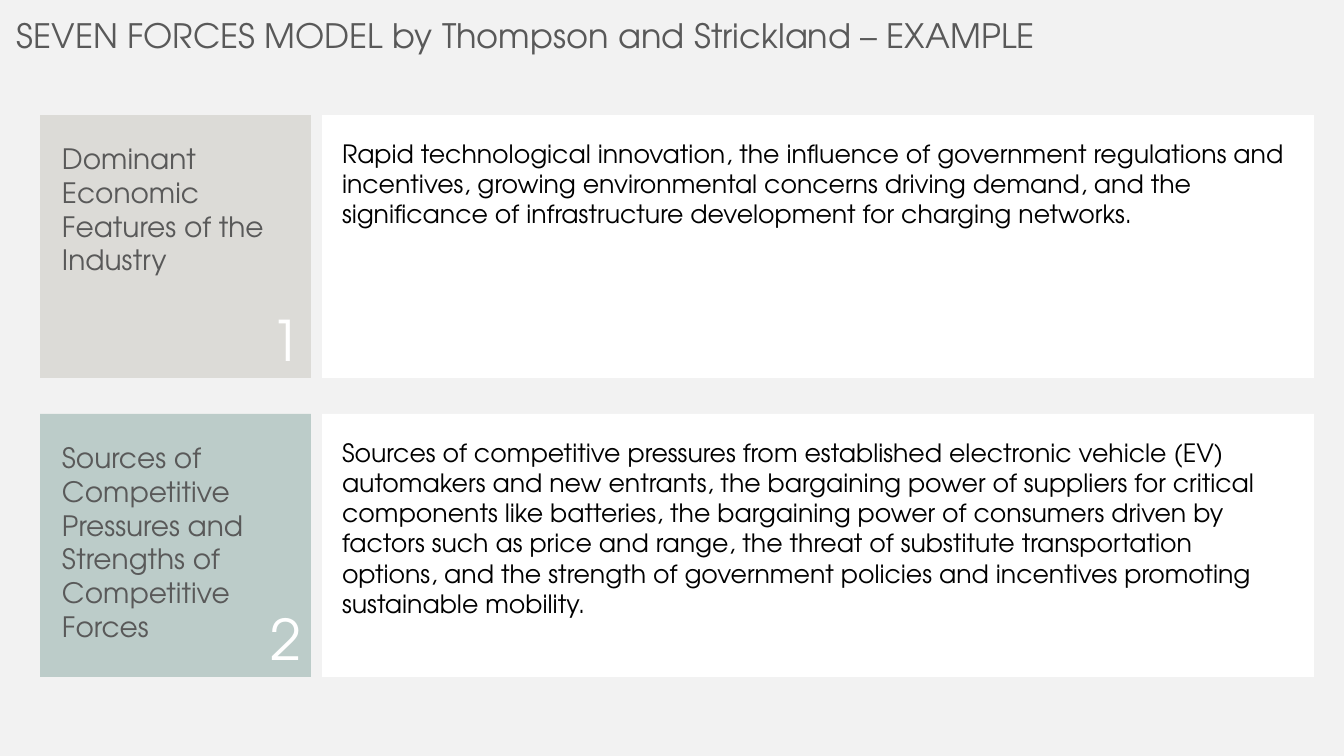
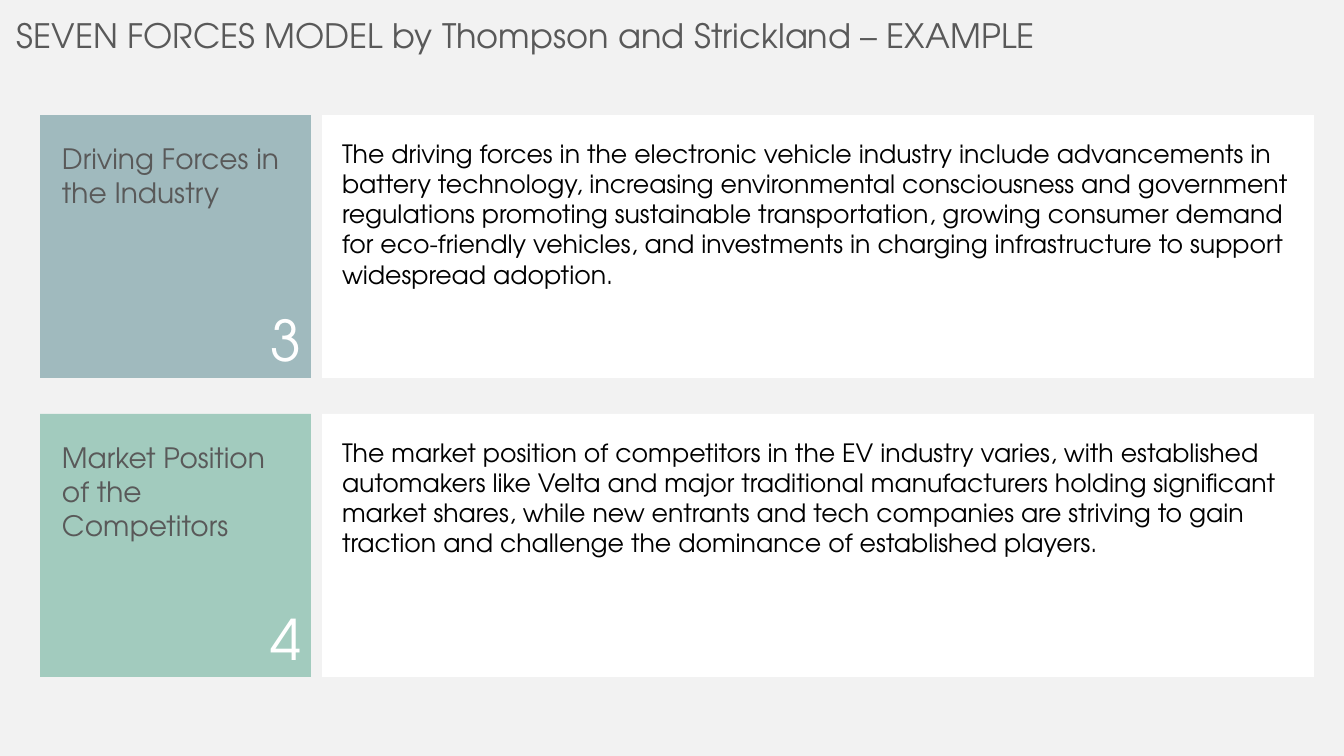
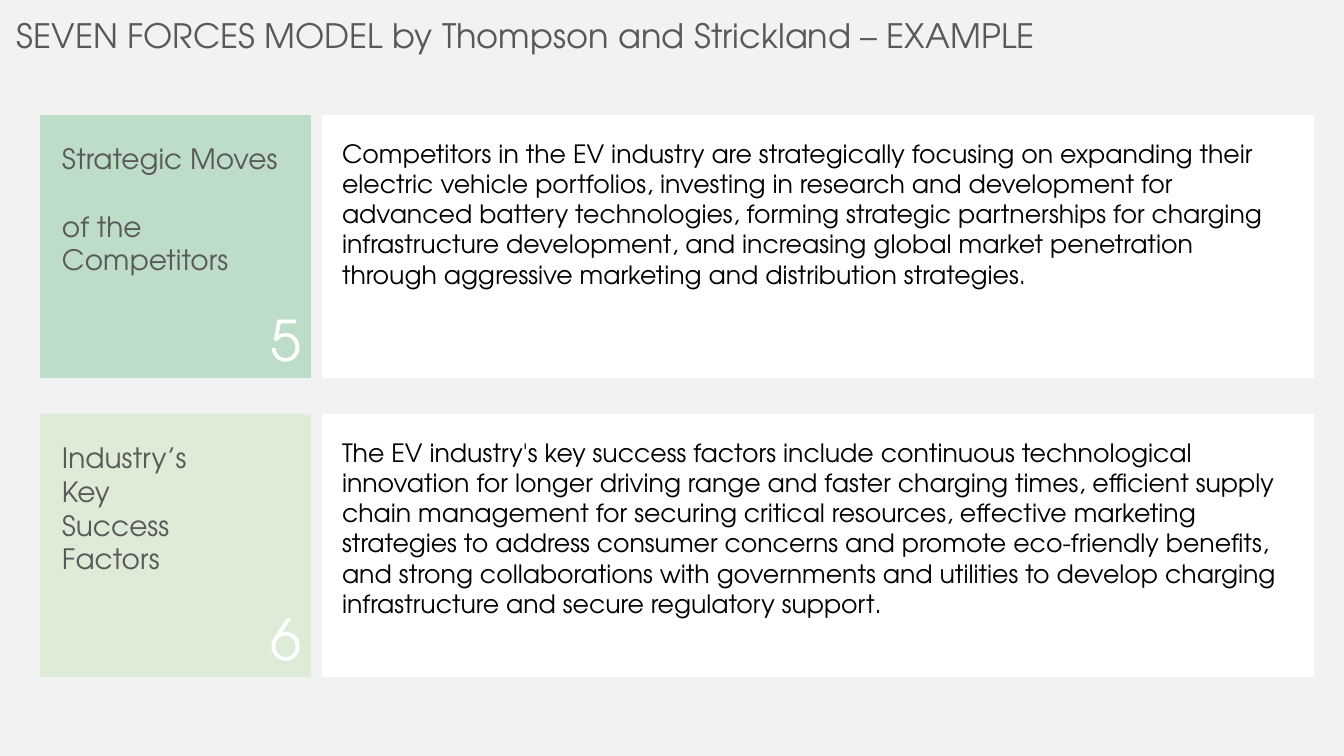
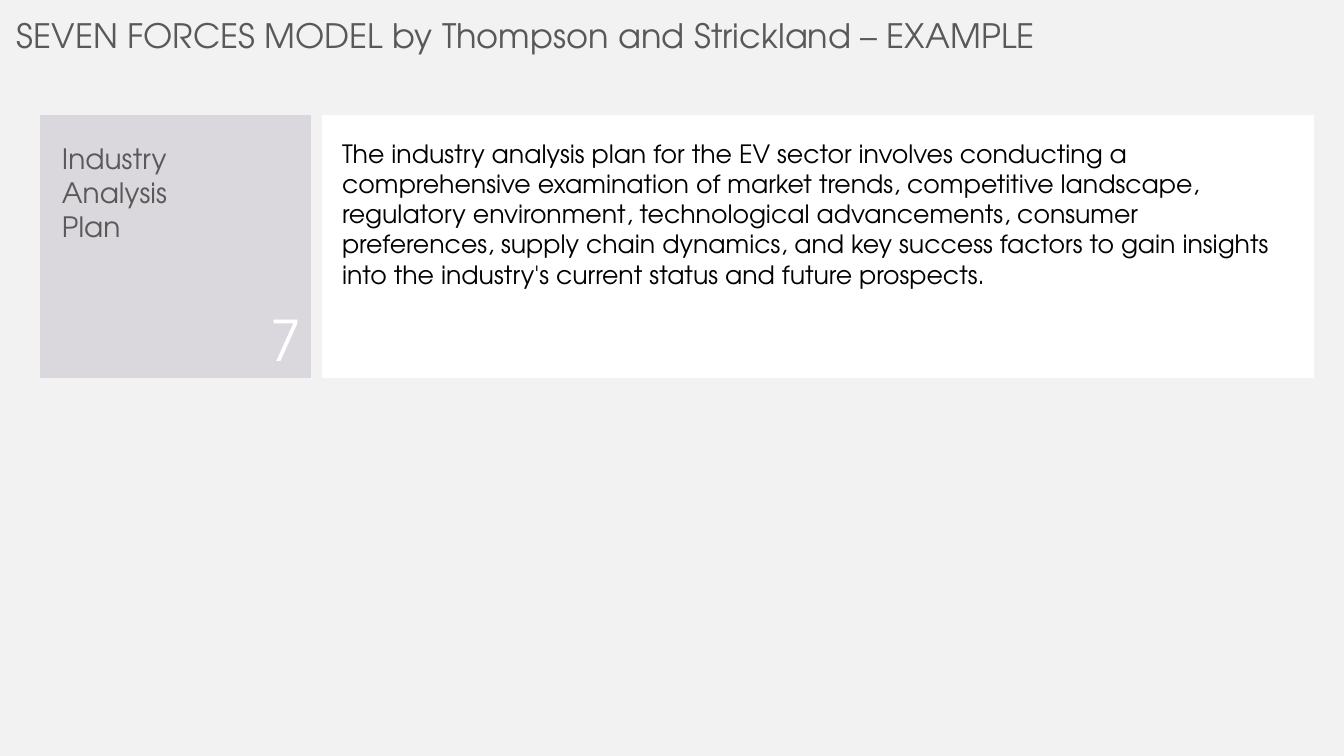
from typing import NamedTuple

from pptx import Presentation
from pptx.dml.color import RGBColor
from pptx.enum.shapes import MSO_SHAPE
from pptx.enum.text import MSO_ANCHOR, PP_ALIGN
from pptx.util import Emu, Pt

RECTANGLE = MSO_SHAPE.RECTANGLE
TOP = MSO_ANCHOR.TOP
LEFT, RIGHT = PP_ALIGN.LEFT, PP_ALIGN.RIGHT

EMU_PER_PX = 914400 / 100.8
FONT = "TeX Gyre Adventor"
COLORS = {
    "background": "F2F2F2",
    "panel": "FFFFFF",
    "heading": "595959",
    "body": "000000",
    "number": "FFFFFF",
    "stone": "DCDBD7",
    "sage": "BCCCC9",
    "steel": "A0BABE",
    "jade": "A2CBBE",
    "mint": "BEDDC9",
    "lime": "DEEBD7",
    "lilac": "DAD8DC",
}

PAGE_WIDTH, PAGE_HEIGHT = 1344, 756
ROW_LEFT, ROW_TOP, ROW_WIDTH, ROW_HEIGHT = 40, 115, 1274, 263
ROW_GAP = 36
ROWS_PER_PAGE = 2
TILE_WIDTH, TILE_GAP = 271, 11
WIDE, NARROW = 238, 174

TITLE = "SEVEN FORCES MODEL by Thompson and Strickland – EXAMPLE"


class Box(NamedTuple):
    left: int
    top: int
    width: int
    height: int


class Force(NamedTuple):
    color: str
    heading: str
    heading_width: int
    body: str


FORCES = [
    Force("stone", "Dominant Economic Features of the Industry", WIDE,
          "Rapid technological innovation, the influence of government regulations "
          "and incentives, growing environmental concerns driving demand, and the "
          "significance of infrastructure development for charging networks."),
    Force("sage", "Sources of Competitive Pressures and Strengths of Competitive Forces", WIDE,
          "Sources of competitive pressures from established electronic vehicle (EV) "
          "automakers and new entrants, the bargaining power of suppliers for critical "
          "components like batteries, the bargaining power of consumers driven by "
          "factors such as price and range, the threat of substitute transportation "
          "options, and the strength of government policies and incentives promoting "
          "sustainable mobility."),
    Force("steel", "Driving Forces in the Industry", WIDE,
          "The driving forces in the electronic vehicle industry include advancements "
          "in battery technology, increasing environmental consciousness and government "
          "regulations promoting sustainable transportation, growing consumer demand "
          "for eco-friendly vehicles, and investments in charging infrastructure to "
          "support widespread adoption."),
    Force("jade", "Market Position of the Competitors", WIDE,
          "The market position of competitors in the EV industry varies, with "
          "established automakers like Velta and major traditional manufacturers "
          "holding significant market shares, while new entrants and tech companies "
          "are striving to gain traction and challenge the dominance of established "
          "players."),
    Force("mint", "Strategic Moves\nof the Competitors", WIDE,
          "Competitors in the EV industry are strategically focusing on expanding "
          "their electric vehicle portfolios, investing in research and development "
          "for advanced battery technologies, forming strategic partnerships for "
          "charging infrastructure development, and increasing global market "
          "penetration through aggressive marketing and distribution strategies."),
    Force("lime", "Industry’s Key Success Factors", NARROW,
          "The EV industry's key success factors include continuous technological "
          "innovation for longer driving range and faster charging times, efficient "
          "supply chain management for securing critical resources, effective marketing "
          "strategies to address consumer concerns and promote eco-friendly benefits, "
          "and strong collaborations with governments and utilities to develop charging "
          "infrastructure and secure regulatory support."),
    Force("lilac", "Industry Analysis Plan", NARROW,
          "The industry analysis plan for the EV sector involves conducting a "
          "comprehensive examination of market trends, competitive landscape, "
          "regulatory environment, technological advancements, consumer preferences, "
          "supply chain dynamics, and key success factors to gain insights into the "
          "industry's current status and future prospects."),
]


def px(length):
    return Emu(round(length * EMU_PER_PX))


def rgb(name):
    return RGBColor.from_string(COLORS[name])


def add_panel(page, box, color):
    panel = page.shapes.add_shape(RECTANGLE, *map(px, box))
    panel.shadow.inherit = False
    panel.fill.solid()
    panel.fill.fore_color.rgb = rgb(color)
    panel.line.fill.background()


def add_text(page, box, text, *, size, color, align=LEFT, indent=10, gap=0):
    """Place one paragraph per line of text, with gap points between them."""
    frame = page.shapes.add_textbox(*map(px, box)).text_frame
    frame.word_wrap = True
    frame.vertical_anchor = TOP
    frame.margin_left, frame.margin_right = px(indent), px(10)
    frame.margin_top = frame.margin_bottom = px(5)
    frame.text = text
    for index, para in enumerate(frame.paragraphs):
        para.alignment = align
        para.space_before = Pt(gap if index else 0)
        for span in para.runs:
            span.font.name = FONT
            span.font.size = Pt(size)
            span.font.color.rgb = rgb(color)


def add_tile(page, box, number, force):
    """Coloured tile with the force's heading and its number in the corner."""
    add_panel(page, box, force.color)
    heading_box = Box(box.left + 12, box.top + 22, force.heading_width, 214)
    add_text(page, heading_box, force.heading, size=20, color="heading", gap=24)
    width, height = 74, 78
    number_box = Box(box.left + box.width - width, box.top + box.height - height, width, height)
    add_text(page, number_box, str(number), size=40, color="number", align=RIGHT)


def add_row(page, box, number, force):
    offset = TILE_WIDTH + TILE_GAP
    panel_box = box._replace(left=box.left + offset, width=box.width - offset)
    add_panel(page, panel_box, "panel")
    body_box = panel_box._replace(top=box.top + 18, width=panel_box.width - 10, height=224)
    add_text(page, body_box, force.body, size=18, color="body", indent=20)
    add_tile(page, box._replace(width=TILE_WIDTH), number, force)


def add_page(deck, first):
    """Add a page with the rows that start at the given index of FORCES."""
    page = deck.slides.add_slide(deck.slide_layouts[6])
    add_text(page, Box(7, 10, 1056, 50), TITLE, size=24, color="heading")
    for row, force in enumerate(FORCES[first:first + ROWS_PER_PAGE]):
        top = ROW_TOP + row * (ROW_HEIGHT + ROW_GAP)
        add_row(page, Box(ROW_LEFT, top, ROW_WIDTH, ROW_HEIGHT), first + row + 1, force)


def main():
    deck = Presentation()
    deck.slide_width, deck.slide_height = px(PAGE_WIDTH), px(PAGE_HEIGHT)
    background = deck.slide_master.background.fill
    background.solid()
    background.fore_color.rgb = rgb("background")
    for first in range(0, len(FORCES), ROWS_PER_PAGE):
        add_page(deck, first)
    deck.save("out.pptx")


if __name__ == "__main__":
    main()
